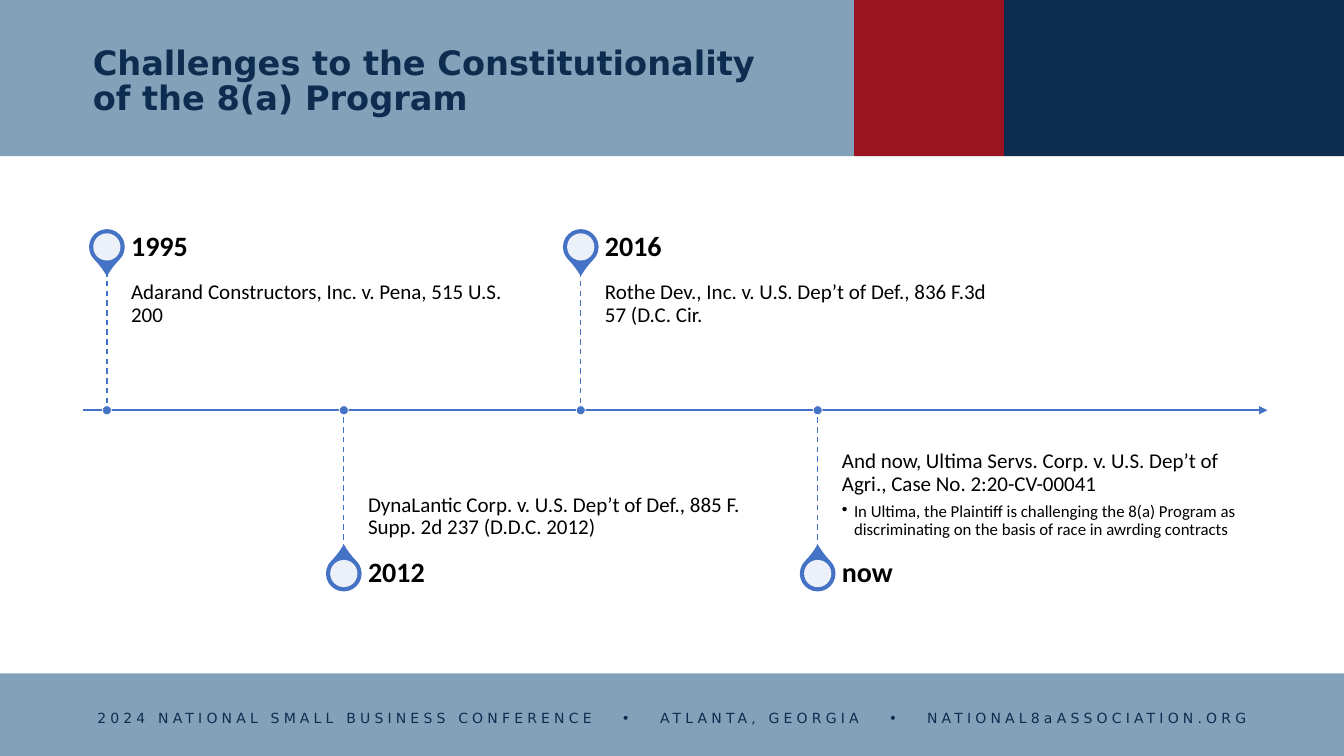
from dataclasses import dataclass

from lxml.etree import SubElement
from pptx import Presentation
from pptx.dml.color import RGBColor
from pptx.enum.dml import MSO_LINE
from pptx.enum.shapes import MSO_CONNECTOR, MSO_SHAPE as Preset
from pptx.enum.text import MSO_ANCHOR as Anchor, MSO_AUTO_SIZE, PP_ALIGN as Align
from pptx.oxml.ns import qn
from pptx.util import Inches, Pt

COLORS = {
    "steel": "83A2B9",
    "red": "991320",
    "navy": "0E2C4F",
    "blue": "4472C4",
    "white": "FFFFFF",
    "black": "000000",
}
HEADING_FONT = "DejaVu Sans"
BODY_FONT = "Calibri"

AXIS_Y = 4.07
FIRST_X = 1.06
STEP = 2.35
STEM = 1.38
DATE_HEIGHT = 0.48
LABEL_WIDTH = 3.91
LABEL_GAP = 0.24
PIN_SIZE = 0.34
HOLE_SIZE = 0.27
DOT_SIZE = 0.09


@dataclass(frozen=True)
class Band:
    left: float
    top: float
    width: float
    height: float
    color: str


@dataclass(frozen=True)
class Case:
    date: str
    citation: str
    above: bool
    detail: str = ""


BANDS = [
    Band(0, 0, 8.47, 1.55, "steel"),
    Band(8.47, 0, 1.49, 1.55, "red"),
    Band(9.96, 0, 3.38, 1.55, "navy"),
    Band(0, 6.68, 13.33, 0.82, "steel"),
]
CASES = [
    Case("1995", "Adarand Constructors, Inc. v. Pena, 515 U.S. 200", True),
    Case("2012", "DynaLantic Corp. v. U.S. Dep’t of Def., 885 F. Supp. 2d 237 (D.D.C. 2012)", False),
    Case("2016", "Rothe Dev., Inc. v. U.S. Dep’t of Def., 836 F.3d 57 (D.C. Cir.", True),
    Case(
        "now",
        "And now, Ultima Servs. Corp. v. U.S. Dep’t of Agri., Case No. 2:20-CV-00041",
        False,
        "In Ultima, the Plaintiff is challenging the 8(a) Program as discriminating "
        "on the basis of race in awrding contracts",
    ),
]


def rgb(name: str) -> RGBColor:
    return RGBColor.from_string(COLORS[name])


def style(paragraph, font_name: str, size: float, color: str, bold: bool = False) -> None:
    font = paragraph.font
    font.name = font_name
    font.size = Pt(size)
    font.bold = bold
    font.color.rgb = rgb(color)


def add_filled(slide, preset, left: float, top: float, width: float, height: float,
               color: str, outline: str = "", weight: float = 1):
    shape = slide.shapes.add_shape(
        preset, Inches(left), Inches(top), Inches(width), Inches(height))
    shape.shadow.inherit = False
    shape.fill.solid()
    shape.fill.fore_color.rgb = rgb(color)
    if outline:
        shape.line.color.rgb = rgb(outline)
        shape.line.width = Pt(weight)
    else:
        shape.line.fill.background()
    return shape


def add_centered(slide, preset, x: float, y: float, size: float, color: str,
                 outline: str = "", weight: float = 1):
    return add_filled(slide, preset, x - size / 2, y - size / 2, size, size,
                      color, outline, weight)


def add_line(slide, x1: float, y1: float, x2: float, y2: float, weight: float):
    line = slide.shapes.add_connector(
        MSO_CONNECTOR.STRAIGHT, Inches(x1), Inches(y1), Inches(x2), Inches(y2))
    line.line.color.rgb = rgb("blue")
    line.line.width = Pt(weight)
    SubElement(line._element.spPr, qn("a:effectLst"))
    return line


def add_text(slide, left: float, top: float, width: float, height: float, anchor,
             insets: tuple[float, float, float, float]):
    frame = slide.shapes.add_textbox(
        Inches(left), Inches(top), Inches(width), Inches(height)).text_frame
    frame.word_wrap = True
    frame.vertical_anchor = anchor
    (frame.margin_left, frame.margin_top,
     frame.margin_right, frame.margin_bottom) = map(Inches, insets)
    return frame


def write(paragraph, text: str, size: float, after: float, bold: bool = False) -> None:
    paragraph.text = text
    paragraph.line_spacing = 0.9
    paragraph.space_after = Pt(after)
    style(paragraph, BODY_FONT, size, "black", bold)


def add_bullet(paragraph, indent: float) -> None:
    properties = paragraph._p.get_or_add_pPr()
    properties.set("marL", str(Inches(indent)))
    properties.set("indent", str(-Inches(indent)))
    SubElement(properties, qn("a:buChar")).set("char", "•")


def add_case(slide, case: Case, x: float) -> None:
    side = -1 if case.above else 1
    stem_end = AXIS_Y + side * STEM
    pin_y = stem_end + side * DATE_HEIGHT / 2
    label_left = x + LABEL_GAP

    pin = add_centered(slide, Preset.TEAR, x, pin_y, PIN_SIZE, "blue", "blue")
    pin.adjustments[0] = 1.15
    pin.rotation = 135 if case.above else 315
    hole = add_centered(slide, Preset.OVAL, x, pin_y, HOLE_SIZE, "white")
    hole_color = hole._element.spPr.find(qn("a:solidFill")).find(qn("a:srgbClr"))
    SubElement(hole_color, qn("a:alpha")).set("val", "90000")

    citation = add_text(
        slide, label_left, min(AXIS_Y, stem_end), LABEL_WIDTH, STEM,
        Anchor.TOP if case.above else Anchor.BOTTOM,
        (0, 0.1, 0.1, 0.16) if case.above else (0, 0.16, 0, 0.1))
    write(citation.paragraphs[0], case.citation, 15, 5.25)
    if case.detail:
        detail = citation.add_paragraph()
        detail.level = 1
        add_bullet(detail, 0.12)
        write(detail, case.detail, 12, 1.8)

    date = add_text(slide, label_left, pin_y - DATE_HEIGHT / 2, LABEL_WIDTH,
                    DATE_HEIGHT, Anchor.MIDDLE, (0, 0, 0.14, 0))
    write(date.paragraphs[0], case.date, 20, 7, True)

    stem = add_line(slide, x, stem_end, x, AXIS_Y, 1)
    stem.line.dash_style = MSO_LINE.DASH
    add_centered(slide, Preset.OVAL, x, AXIS_Y, DOT_SIZE, "blue", "white", 0.5)


def add_title(slide) -> None:
    title = slide.shapes.title
    title.left, title.top, title.width, title.height = map(Inches, (0.82, 0.57, 6.93, 0.64))
    frame = title.text_frame
    frame.auto_size = MSO_AUTO_SIZE.NONE
    frame.word_wrap = True
    frame.vertical_anchor = Anchor.BOTTOM
    heading = frame.paragraphs[0]
    heading.text = "Challenges to the Constitutionality of the 8(a) Program"
    heading.alignment = Align.LEFT
    heading.line_spacing = 0.85
    style(heading, HEADING_FONT, 24, "navy", True)


def add_footer(slide) -> None:
    frame = add_text(slide, 0, 6.99, 13.33, 0.27, Anchor.TOP, (0.1, 0.05, 0.1, 0.05))
    footer = frame.paragraphs[0]
    footer.text = "2024 NATIONAL SMALL BUSINESS CONFERENCE   •   ATLANTA, GEORGIA   •   NATIONAL8aASSOCIATION.ORG"
    footer.alignment = Align.CENTER
    style(footer, HEADING_FONT, 10, "navy")
    footer.runs[0]._r.get_or_add_rPr().set("spc", "300")


def main() -> None:
    deck = Presentation()
    deck.slide_width, deck.slide_height = Inches(13.33), Inches(7.5)
    slide = deck.slides.add_slide(deck.slide_layouts[5])
    for band in BANDS:
        add_filled(slide, Preset.RECTANGLE, band.left, band.top,
                   band.width, band.height, band.color)
    title_element = slide.shapes.title._element
    title_element.getparent().append(title_element)
    add_title(slide)
    add_footer(slide)
    axis = add_line(slide, 0.82, AXIS_Y, 12.57, AXIS_Y, 1.5)
    SubElement(axis.line._get_or_add_ln(), qn("a:tailEnd")).set("type", "triangle")
    for index, case in enumerate(CASES):
        add_case(slide, case, FIRST_X + index * STEP)
    deck.save("out.pptx")


if __name__ == "__main__":
    main()
